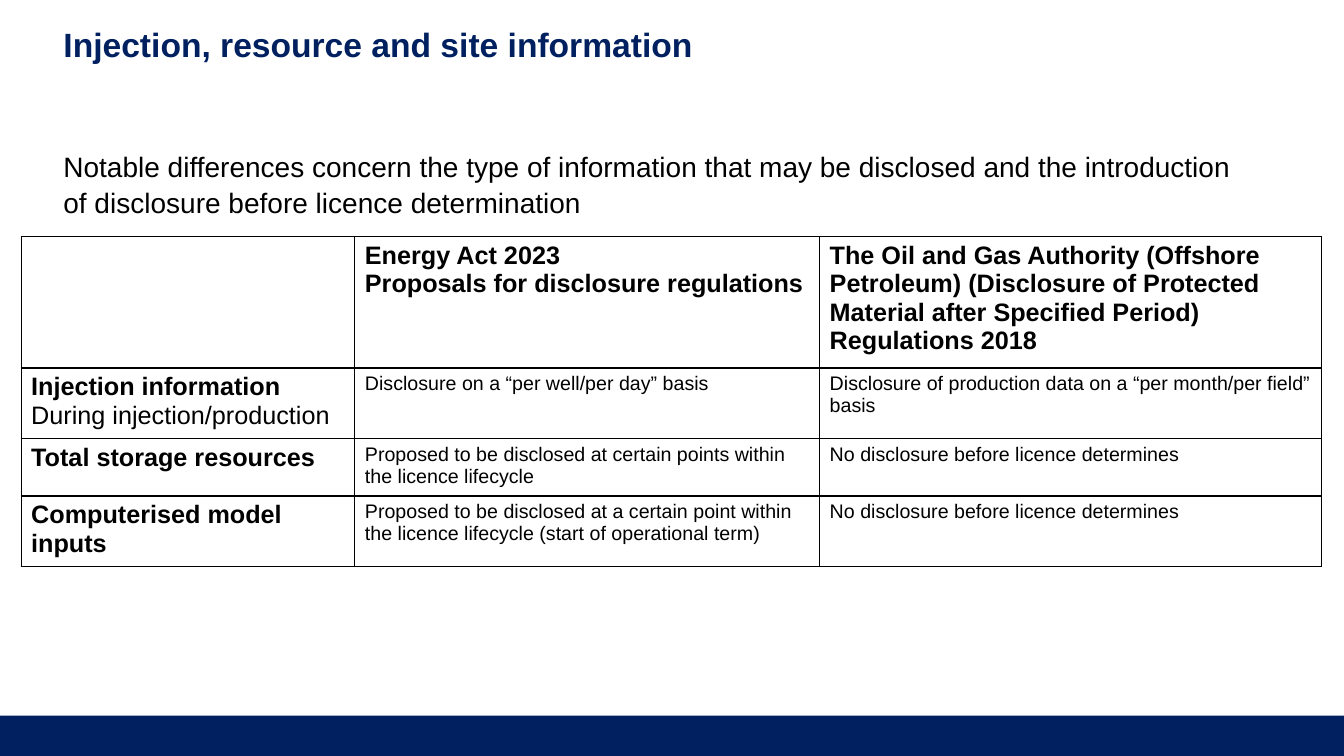
from pptx import Presentation
from pptx.dml.color import RGBColor
from pptx.enum.shapes import MSO_SHAPE
from pptx.oxml import parse_xml
from pptx.oxml.ns import nsdecls
from pptx.util import Inches, Pt

# Content
TITLE = "Injection, resource and site information"
INTRO = ("Notable differences concern the type of information that may be disclosed "
         "and the introduction of disclosure before licence determination")
# Each cell is a list of (text, size, bold) paragraphs
COMPARISON = [
    [[],
     [("Energy Act 2023", 18, True),
      ("Proposals for disclosure regulations", 18, True)],
     [("The Oil and Gas Authority (Offshore Petroleum) (Disclosure of Protected "
       "Material after Specified Period) Regulations 2018", 18, True)]],
    [[("Injection information", 18, True),
      ("During injection/production", 18, False)],
     [("Disclosure on a “per well/per day” basis", 14, False)],
     [("Disclosure of production data on a “per month/per field” basis", 14, False)]],
    [[("Total storage resources", 18, True)],
     [("Proposed to be disclosed at certain points within the licence lifecycle",
       14, False)],
     [("No disclosure before licence determines", 14, False)]],
    [[("Computerised model inputs", 18, True)],
     [("Proposed to be disclosed at a certain point within the licence lifecycle "
       "(start of operational term)", 14, False)],
     [("No disclosure before licence determines", 14, False)]],
]
COLUMN_WIDTHS = [3.31, 4.61, 4.98]
ROW_HEIGHTS = [1.3, 0.7, 0.57, 0.7]

NAVY = RGBColor(0x00, 0x20, 0x60)
BLACK = RGBColor(0x00, 0x00, 0x00)
FONT = "Arial"


def write(paragraph, text, size, bold=False, color=BLACK):
    paragraph.text = text
    for run in paragraph.runs:
        run.font.name = FONT
        run.font.size = Pt(size)
        run.font.bold = bold
        run.font.color.rgb = color


def outline(cell):
    properties = cell._tc.get_or_add_tcPr()
    for position, side in enumerate(("lnL", "lnR", "lnT", "lnB")):
        properties.insert(position, parse_xml(
            f'<a:{side} {nsdecls("a")} w="{Pt(1)}"><a:solidFill>'
            f'<a:srgbClr val="{BLACK}"/></a:solidFill></a:{side}>'))


def add_text(slide, place, text, size, spacing, bold=False, color=BLACK):
    frame = slide.shapes.add_textbox(*map(Inches, place)).text_frame
    frame.word_wrap = True
    write(frame.paragraphs[0], text, size, bold, color)
    frame.paragraphs[0].line_spacing = spacing
    return frame


def add_comparison(slide):
    table = slide.shapes.add_table(
        len(ROW_HEIGHTS), len(COLUMN_WIDTHS), Inches(0.21), Inches(2.35),
        Inches(sum(COLUMN_WIDTHS)), Inches(sum(ROW_HEIGHTS))).table
    table.first_row = table.horz_banding = False
    for column, width in zip(table.columns, COLUMN_WIDTHS):
        column.width = Inches(width)
    for row, height, entries in zip(table.rows, ROW_HEIGHTS, COMPARISON):
        row.height = Inches(height)
        for cell, entry in zip(row.cells, entries):
            cell.fill.background()
            outline(cell)
            frame = cell.text_frame
            for index, (text, size, bold) in enumerate(entry):
                paragraph = frame.add_paragraph() if index else frame.paragraphs[0]
                write(paragraph, text, size, bold)


def main():
    deck = Presentation()
    deck.slide_width, deck.slide_height = Inches(13.33), Inches(7.5)
    slide = deck.slides.add_slide(deck.slide_layouts[6])

    # Footer band
    footer = slide.shapes.add_shape(
        MSO_SHAPE.RECTANGLE, 0, Inches(7.1), deck.slide_width, Inches(0.4))
    footer.shadow.inherit = False
    footer.fill.solid()
    footer.fill.fore_color.rgb = NAVY
    footer.line.fill.background()

    # Title and introduction
    heading = add_text(slide, (0.63, 0.28, 7.76, 0.55), TITLE, 24, 0.9, True, NAVY)
    heading.margin_left = heading.margin_top = 0
    add_text(slide, (0.53, 1.42, 11.88, 0.77), INTRO, 20, 1.05)

    # Comparison of the two regimes
    add_comparison(slide)
    deck.save("out.pptx")


if __name__ == "__main__":
    main()
